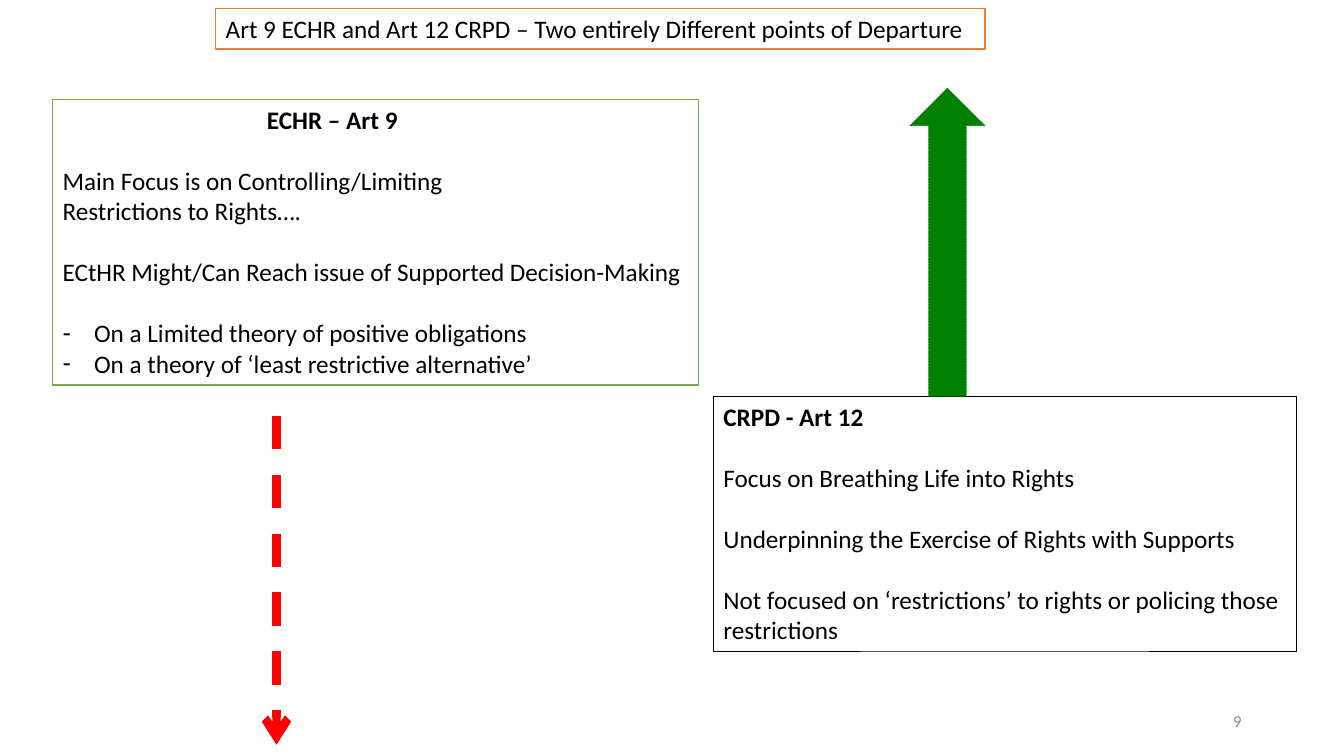
from lxml.etree import SubElement
from pptx import Presentation
from pptx.dml.color import RGBColor
from pptx.enum.dml import MSO_LINE
from pptx.enum.shapes import MSO_CONNECTOR, MSO_SHAPE
from pptx.enum.text import MSO_ANCHOR, MSO_AUTO_SIZE, PP_ALIGN
from pptx.oxml.ns import qn
from pptx.util import Pt

LINE_GAP = 22
DASH_INDENT = 22.5


def color(hex_code):
    return RGBColor.from_string(hex_code)


def write_lines(shape, box, lines, size=18, text_color="000000", align=PP_ALIGN.LEFT,
                anchor=MSO_ANCHOR.TOP):
    """Place the shape and fill it with (text, space before, left indent, bold, bullet) lines."""
    shape.left, shape.top, shape.width, shape.height = map(Pt, box)
    frame = shape.text_frame
    frame.word_wrap = True
    frame.auto_size = MSO_AUTO_SIZE.NONE
    frame.vertical_anchor = anchor
    for i, (text, gap, indent, bold, bullet) in enumerate(lines):
        paragraph = frame.paragraphs[0] if i == 0 else frame.add_paragraph()
        paragraph.text = text
        paragraph.alignment = align
        paragraph.line_spacing = 1.0
        paragraph.space_before = Pt(gap)
        properties = paragraph._p.get_or_add_pPr()
        properties.set("marL", str(Pt(indent)))
        properties.set("indent", str(-Pt(indent) if bullet else 0))
        if bullet:
            SubElement(properties, qn("a:buChar")).set("char", bullet)
        else:
            SubElement(properties, qn("a:buNone"))
        font = paragraph.font
        font.name, font.size, font.bold = "Calibri", Pt(size), bold
        font.color.rgb = color(text_color)


presentation = Presentation()
presentation.slide_width, presentation.slide_height = Pt(960), Pt(540)
slide = presentation.slides.add_slide(presentation.slide_layouts[3])
title, echr, crpd = slide.placeholders

write_lines(title, (154, 6, 549.5, 29), [
    ("Art 9 ECHR and Art 12 CRPD – Two entirely Different points of Departure", 0, 0, False, None),
])
write_lines(echr, (37.5, 71, 461.5, 204), [
    ("ECHR – Art 9", 0, 146, True, None),
    ("Main Focus is on Controlling/Limiting", LINE_GAP, 0, False, None),
    ("Restrictions to Rights….", 0, 0, False, None),
    ("ECtHR Might/Can Reach issue of Supported Decision-Making", LINE_GAP, 0, False, None),
    ("On a Limited theory of positive obligations", LINE_GAP, DASH_INDENT, False, "-"),
    ("On a theory of ‘least restrictive alternative’", 0, DASH_INDENT, False, "-"),
])
write_lines(crpd, (509.5, 283, 416.5, 182), [
    ("CRPD - Art 12", 0, 0, True, None),
    ("Focus on Breathing Life into Rights", LINE_GAP, 0, False, None),
    ("Underpinning the Exercise of Rights with Supports", LINE_GAP, 0, False, None),
    ("Not focused on ‘restrictions’ to rights or policing those", LINE_GAP, 0, False, None),
    ("restrictions", 0, 0, False, None),
])
for box, border, width in ((title, "ED7D31", 1), (echr, "70AD47", 1), (crpd, "000000", 0.5)):
    box.line.color.rgb = color(border)
    box.line.width = Pt(width)
for box in (title, echr):
    box.fill.solid()
    box.fill.fore_color.rgb = color("FFFFFF")

restriction = slide.shapes.add_connector(
    MSO_CONNECTOR.STRAIGHT, Pt(197.5), Pt(297), Pt(197.5), Pt(532))
restriction.line.color.rgb = color("FF0000")
restriction.line.width = Pt(6)
restriction.line.dash_style = MSO_LINE.DASH
SubElement(restriction.line._get_or_add_ln(), qn("a:tailEnd")).set("type", "arrow")
SubElement(restriction._element.spPr, qn("a:effectLst"))

support = slide.shapes.add_shape(MSO_SHAPE.UP_ARROW, Pt(650), Pt(63), Pt(53.5), Pt(220))
support.shadow.inherit = False
support.fill.solid()
support.fill.fore_color.rgb = color("008000")
support.line.color.rgb = color("008000")
support.line.width = Pt(0.5)
support.line.dash_style = MSO_LINE.SQUARE_DOT

page_number = slide.shapes.add_textbox(0, 0, 0, 0)
write_lines(page_number, (678, 500.5, 216, 29), [("9", 0, 0, False, None)],
            size=12, text_color="8C8C8C", align=PP_ALIGN.RIGHT, anchor=MSO_ANCHOR.MIDDLE)

presentation.save("out.pptx")
